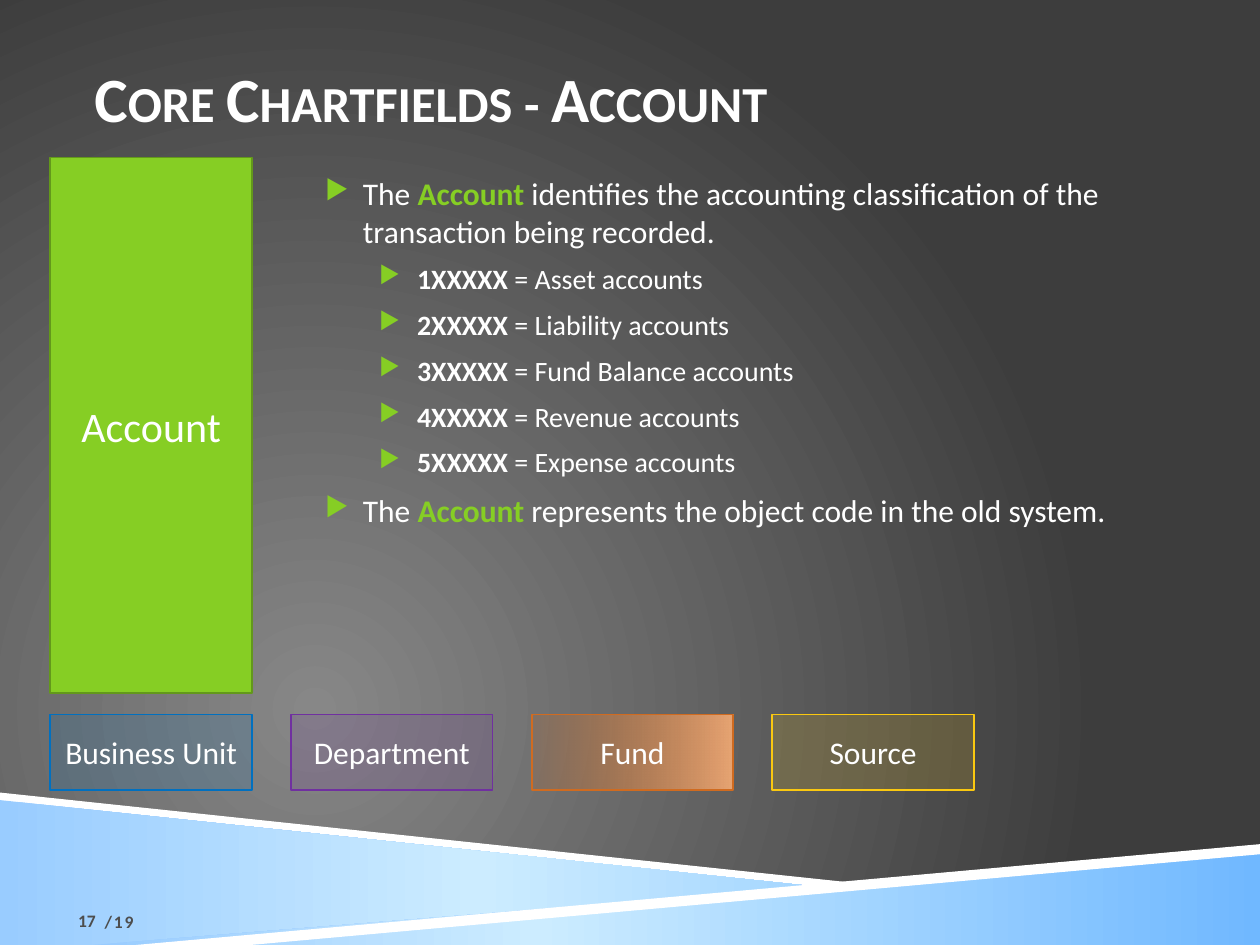
from lxml.etree import SubElement
from pptx import Presentation
from pptx.dml.color import RGBColor
from pptx.enum.shapes import MSO_SHAPE
from pptx.enum.text import MSO_ANCHOR, PP_ALIGN
from pptx.oxml.ns import qn
from pptx.util import Inches, Pt

WHITE, GREEN, GREY = "FFFFFF", "86CE24", "4D4D4D"
SKY = [(0, "99CCFF", 100), (38, "CCECFF", 100), (100, "70B8FF", 100)]
ACCOUNTS = ["Asset", "Liability", "Fund Balance", "Revenue", "Expense"]
FIELDS = [("Business Unit", "0070C0"), ("Department", "7030A0"),
          ("Fund", "D06B20"), ("Source", "FAC810")]


def rgb(value):
    return RGBColor.from_string(value)


def add_child(parent, tag, **attrs):
    return SubElement(parent, qn(tag), {k: str(v) for k, v in attrs.items()})


def set_gradient(fill, element, stops, focus=None):
    fill.gradient()
    grad = element.find(".//" + qn("a:gradFill"))
    for child in list(grad):
        grad.remove(child)
    gs_list = add_child(grad, "a:gsLst")
    for pos, color, alpha in stops:
        gs = add_child(gs_list, "a:gs", pos=pos * 1000)
        clr = add_child(gs, "a:srgbClr", val=color)
        if alpha < 100:
            add_child(clr, "a:alpha", val=alpha * 1000)
    if focus:
        path = add_child(grad, "a:path", path="circle")
        sides = {side: pct * 1000 for side, pct in zip("ltrb", focus)}
        add_child(path, "a:fillToRect", **sides)
    else:
        add_child(grad, "a:lin", ang=0, scaled=0)


def set_solid(sp, color, alpha=100):
    sp.fill.solid()
    sp.fill.fore_color.rgb = rgb(color)
    if alpha < 100:
        clr = sp._element.spPr.find(qn("a:solidFill")).find(qn("a:srgbClr"))
        add_child(clr, "a:alpha", val=alpha * 1000)


def add_run(p, text, size, color=WHITE, bold=False):
    r = p.add_run()
    r.text = text
    font = {"name": "Calibri", "size": Pt(size), "bold": bold}
    for name, value in font.items():
        setattr(r.font, name, value)
    r.font.color.rgb = rgb(color)
    return r


def add_text(slide, box, anchor, bottom=0.05):
    tf = slide.shapes.add_textbox(*map(Inches, box)).text_frame
    frame = {"word_wrap": True, "vertical_anchor": anchor,
             "margin_left": 0, "margin_right": 0,
             "margin_top": Inches(0.05), "margin_bottom": Inches(bottom)}
    for name, value in frame.items():
        setattr(tf, name, value)
    return tf


def add_bullet(p, level, runs):
    p.level = level
    p.space_before = Pt(7)
    pPr = p._p.get_or_add_pPr()
    pPr.set("marL", str(Inches((0.38, 0.81)[level])))
    pPr.set("indent", str(Inches(-0.3)))
    add_child(add_child(pPr, "a:buClr"), "a:srgbClr", val=GREEN)
    add_child(pPr, "a:buSzPct", val=85000)
    add_child(pPr, "a:buChar", char="▶")
    for text, color, bold in runs:
        add_run(p, text, (18, 16)[level], color, bold)


def add_box(slide, box, text, size, line):
    sp = slide.shapes.add_shape(MSO_SHAPE.RECTANGLE, *map(Inches, box))
    sp.shadow.inherit = False
    sp.line.color.rgb = rgb(line)
    sp.line.width = Pt(1)
    tf = sp.text_frame
    tf.word_wrap = True
    tf.vertical_anchor = MSO_ANCHOR.MIDDLE
    p = tf.paragraphs[0]
    p.alignment = PP_ALIGN.CENTER
    add_run(p, text, size)
    return sp


def add_polygon(slide, points):
    start, *rest = [(Inches(x), Inches(y)) for x, y in points]
    builder = slide.shapes.build_freeform(*start)
    builder.add_line_segments(rest, close=True)
    sp = builder.convert_to_shape()
    sp.shadow.inherit = False
    sp.line.fill.background()
    return sp


def add_backdrop(slide):
    set_gradient(slide.background.fill, slide._element,
                 [(0, "878787", 100), (100, "3D3D3D", 100)],
                 focus=(50, 100, 100, 50))
    polygons = [
        ([(0, 6.29), (0, 6.36), (7.9, 7.2), (8.32, 7.17)], False),
        ([(0, 6.35), (10, 7.41), (10, 7.5), (0, 7.5)], True),
        ([(0.74, 7.5), (10, 6.76), (10, 7.5)], True),
        ([(10, 6.7), (1.08, 7.5), (1.99, 7.5), (10, 6.78)], False),
    ]
    for points, is_sky in polygons:
        sp = add_polygon(slide, points)
        if is_sky:
            set_gradient(sp.fill, sp._element, SKY)
        else:
            set_solid(sp, WHITE)


def add_title(slide):
    tf = add_text(slide, (0.75, 0.3, 8.5, 0.95), MSO_ANCHOR.MIDDLE)
    r = add_run(tf.paragraphs[0], "Core Chartfields - Account", 36, bold=True)
    r.font._element.set("cap", "small")


def add_body(slide):
    def statement(text):
        return 0, [("The ", WHITE, False), ("Account ", GREEN, True),
                   (text, WHITE, False)]

    items = [statement("identifies the accounting classification of the "
                       "transaction being recorded.")]
    for number, name in enumerate(ACCOUNTS, 1):
        items.append((1, [(f"{number}XXXXX", WHITE, True),
                          (f" = {name} accounts", WHITE, False)]))
    items.append(statement("represents the object code in the old system."))

    tf = add_text(slide, (2.5, 1.33, 6.75, 4.08), MSO_ANCHOR.TOP)
    for i, (level, runs) in enumerate(items):
        p = tf.add_paragraph() if i else tf.paragraphs[0]
        add_bullet(p, level, runs)


def add_fields(slide):
    account = add_box(slide, (0.4, 1.25, 1.6, 4.25), "Account", 24, "63981B")
    set_solid(account, GREEN)
    for i, (name, color) in enumerate(FIELDS):
        sp = add_box(slide, (0.4 + 1.91 * i, 5.67, 1.6, 0.6), name, 18, color)
        if name == "Fund":
            set_gradient(sp.fill, sp._element,
                         [(0, color, 15), (100, "E9A573", 100)])
        else:
            set_solid(sp, color, 15)


def add_page_number(slide):
    tf = add_text(slide, (0.26, 6.99, 0.5, 0.4), MSO_ANCHOR.BOTTOM, 0)
    tf.paragraphs[0].alignment = PP_ALIGN.RIGHT
    add_run(tf.paragraphs[0], "17", 10, GREY, True)
    tf = add_text(slide, (0.83, 7, 0.92, 0.4), MSO_ANCHOR.BOTTOM, 0)
    r = add_run(tf.paragraphs[0], "/19", 10, GREY, True)
    r.font._element.set("spc", "110")


def main():
    prs = Presentation()
    prs.slide_width, prs.slide_height = Inches(10), Inches(7.5)
    slide = prs.slides.add_slide(prs.slide_layouts[6])
    add_backdrop(slide)
    add_title(slide)
    add_body(slide)
    add_fields(slide)
    add_page_number(slide)
    prs.save("out.pptx")


if __name__ == "__main__":
    main()
